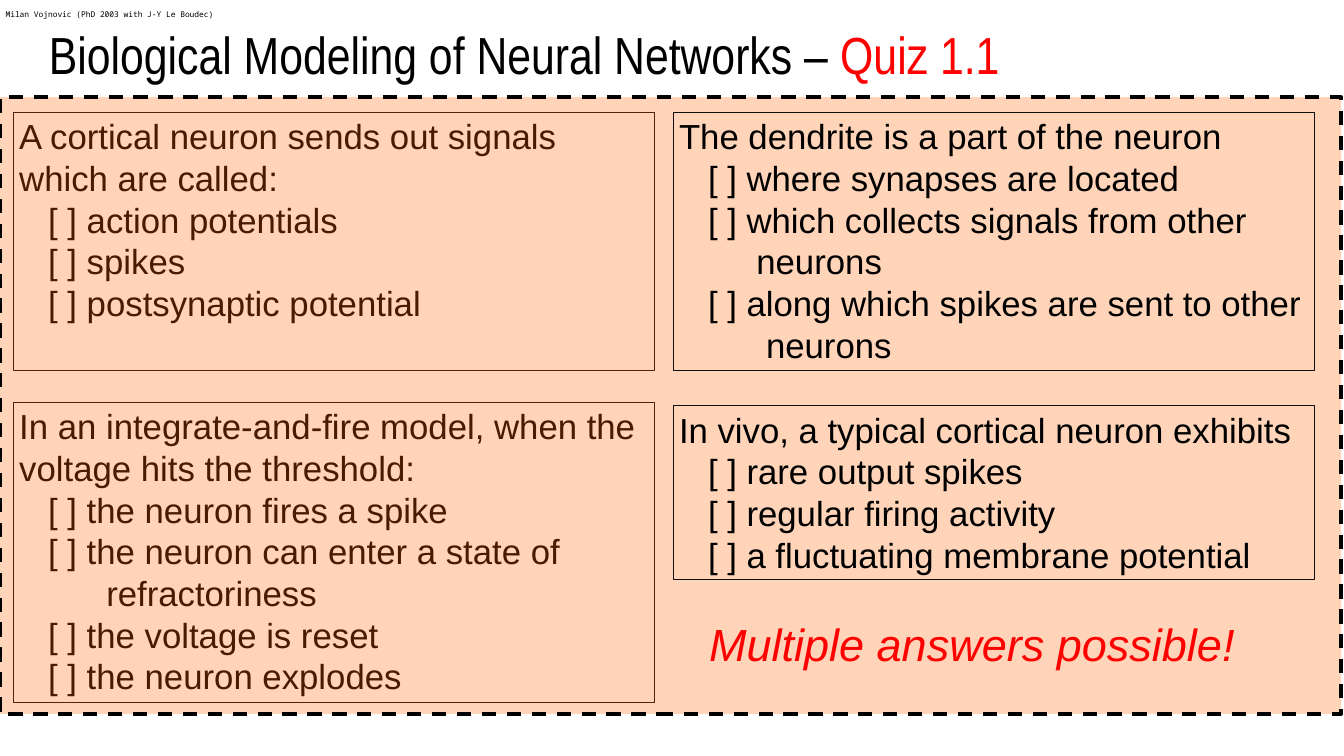
from pptx import Presentation
from pptx.dml.color import RGBColor
from pptx.enum.dml import MSO_LINE
from pptx.enum.shapes import MSO_SHAPE
from pptx.enum.text import MSO_ANCHOR, PP_ALIGN
from pptx.oxml.ns import qn
from pptx.util import Inches, Pt
from lxml import etree

RECTANGLE = MSO_SHAPE.RECTANGLE
DASH = MSO_LINE.DASH
LEFT = PP_ALIGN.LEFT
TOP, MIDDLE = MSO_ANCHOR.TOP, MSO_ANCHOR.MIDDLE
TITLE_ONLY = 5

BLACK, RED, ORANGE, FRAME = "000000", "FF0000", "FF6600", "0D0D0D"
SPACE = 0.17  # width of one indent step in the quiz text
LEFT_COLUMN, RIGHT_COLUMN = 0.24, 11.84
COLUMN_WIDTH = 11.26


def colour(value):
    return RGBColor.from_string(value)


class QuizPage:
    def __init__(self, deck):
        self.font = "Arial"
        self.page = deck.slides.add_slide(deck.slide_layouts[TITLE_ONLY])

    def style(self, para, size, shade=BLACK, font=None, italic=False):
        para.alignment = LEFT
        para.font.name = font or self.font
        para.font.size = Pt(size)
        para.font.italic = italic
        para.font.color.rgb = colour(shade)

    def title(self, text, accent, place):
        box = self.page.shapes.title
        box.left, box.top, box.width, box.height = map(Inches, place)
        frame = box.text_frame
        frame.vertical_anchor = TOP
        para = frame.paragraphs[0]
        self.style(para, 66, font="Arial Narrow")
        para.add_run().text = text
        span = para.add_run()
        span.text = accent
        span.font.color.rgb = colour(RED)

    def rectangle(self, place, line, width):
        box = self.page.shapes.add_shape(RECTANGLE, *map(Inches, place))
        box.shadow.inherit = False
        box.fill.background()
        box.line.color.rgb = colour(line)
        box.line.width = Pt(width)
        return box

    def panel(self, place):
        box = self.rectangle(place, BLACK, 4.5)
        box.line.dash_style = DASH
        box.fill.solid()
        box.fill.fore_color.rgb = colour(ORANGE)
        shade = box.fill._xPr.find(qn("a:solidFill"))[0]
        etree.SubElement(shade, qn("a:alpha")).set("val", "28000")

    def question(self, left, top, height, lines):
        box = self.rectangle((left, top, COLUMN_WIDTH, height), FRAME, 0.75)
        frame = box.text_frame
        frame.word_wrap = True
        frame.vertical_anchor = TOP
        for number, (steps, text) in enumerate(lines):
            para = frame.add_paragraph() if number else frame.paragraphs[0]
            para.text = text
            self.style(para, 44)
            properties = para._p.get_or_add_pPr()
            properties.set("marL", str(Inches(steps * SPACE)))
            properties.set("indent", "0")

    def label(self, text, place, size, anchor=TOP, **look):
        box = self.page.shapes.add_textbox(*map(Inches, place))
        frame = box.text_frame
        frame.word_wrap = True
        frame.vertical_anchor = anchor
        para = frame.paragraphs[0]
        para.text = text
        self.style(para, size, **look)


def main():
    deck = Presentation()
    deck.slide_width, deck.slide_height = Inches(23.63), Inches(13.29)
    quiz = QuizPage(deck)

    # Heading
    quiz.title("Biological Modeling of Neural Networks – ", "Quiz 1.1",
               (0.76, 0.35, 22.81, 1.61))

    # Left questions, tinted by the panel above them
    quiz.question(LEFT_COLUMN, 1.97, 4.54, [
        (0, "A cortical neuron sends out signals which are called:"),
        (3, "[ ] action potentials"),
        (3, "[ ] spikes"),
        (3, "[ ] postsynaptic potential"),
    ])
    quiz.question(LEFT_COLUMN, 7.07, 5.28, [
        (0, "In an integrate-and-fire model, when the voltage hits the threshold:"),
        (3, "[ ] the neuron fires a spike"),
        (3, "[ ] the neuron can enter a state of"),
        (9, "refractoriness"),
        (3, "[ ] the voltage is reset"),
        (3, "[ ] the neuron explodes"),
    ])
    quiz.panel((0, 1.71, 23.58, 10.84))

    # Right questions
    quiz.question(RIGHT_COLUMN, 1.97, 4.54, [
        (0, "The dendrite is a part of the neuron"),
        (3, "[ ] where synapses are located"),
        (3, "[ ] which collects signals from other"),
        (8, "neurons"),
        (3, "[ ] along which spikes are sent to other"),
        (9, "neurons"),
    ])
    quiz.question(RIGHT_COLUMN, 7.13, 3.06, [
        (0, "In vivo, a typical cortical neuron exhibits"),
        (3, "[ ] rare output spikes"),
        (3, "[ ] regular firing activity"),
        (3, "[ ] a fluctuating membrane potential"),
    ])

    # Hint and credit line
    quiz.label("Multiple answers possible!", (12.37, 10.79, 9.54, 1.06),
               57, shade=RED, italic=True)
    quiz.label("Milan Vojnovic (PhD 2003 with J-Y Le Boudec)",
               (0, 0, 23.63, 0.5), 10, MIDDLE, font="Noto Sans Mono")

    deck.save("out.pptx")


if __name__ == "__main__":
    main()
